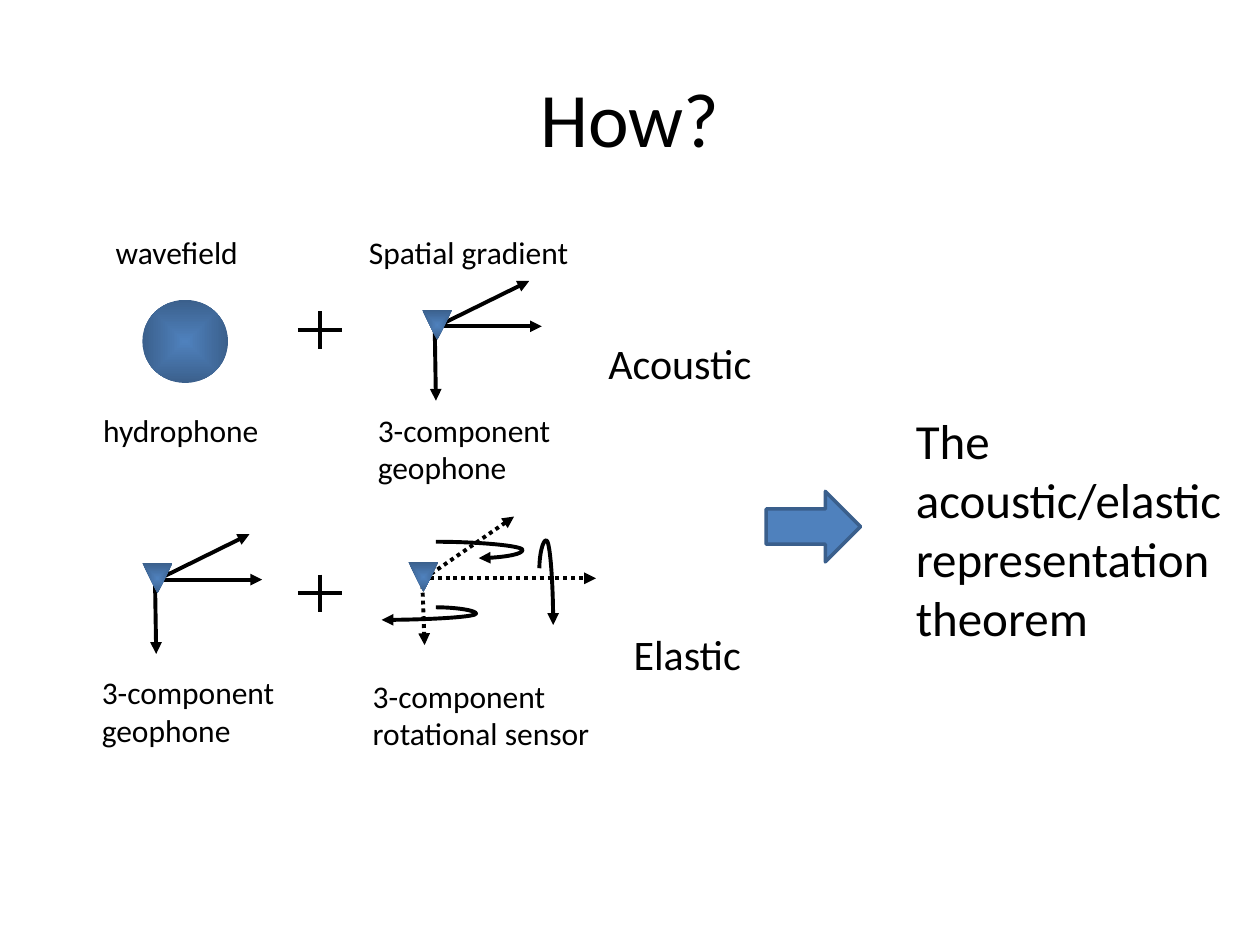
from lxml import etree
from pptx import Presentation
from pptx.dml.color import RGBColor
from pptx.enum.dml import MSO_LINE
from pptx.enum.shapes import MSO_CONNECTOR, MSO_SHAPE
from pptx.enum.text import MSO_ANCHOR, MSO_AUTO_SIZE, PP_ALIGN
from pptx.oxml import parse_xml
from pptx.oxml.ns import nsdecls, qn
from pptx.util import Inches, Pt

STRAIGHT, CURVE = MSO_CONNECTOR.STRAIGHT, MSO_CONNECTOR.CURVE
TRIANGLE, OVAL, ARROW = MSO_SHAPE.ISOSCELES_TRIANGLE, MSO_SHAPE.OVAL, MSO_SHAPE.RIGHT_ARROW
DOTTED = MSO_LINE.ROUND_DOT
CENTER, MIDDLE, FIT = PP_ALIGN.CENTER, MSO_ANCHOR.MIDDLE, MSO_AUTO_SIZE.SHAPE_TO_FIT_TEXT

THEME = {
    "font": "Calibri", "ink": "000000", "blue": "4F81BD", "dark": "3B608C", "border": "3A5F8C",
    "title": 44, "result": 28, "method": 24, "label": 18, "stroke": 2.25, "arrow_border": 2,
}

TITLE = ("How?", (0.5, 0.3, 9, 1.25))
# text, (left, top, width, height), size name, wraps
TEXTS = [
    ("wavefield", (0.82, 1.8, 1.3, 0.4), "label", True),
    ("Spatial gradient", (2.83, 1.8, 2.41, 0.4), "label", True),
    ("hydrophone", (0.72, 3.21, 1.87, 0.4), "label", True),
    ("3-component geophone", (2.9, 3.21, 1.87, 0.7), "label", True),
    ("3-component geophone", (0.71, 5.29, 1.87, 0.7), "label", True),
    ("3-component rotational sensor", (2.86, 5.32, 2.39, 0.71), "label", True),
    ("Acoustic", (4.73, 2.63, 1.54, 0.5), "method", False),
    ("Elastic", (4.93, 4.94, 1.15, 0.5), "method", False),
    ("The acoustic/elastic representation theorem", (7.17, 3.21, 2.75, 1.99), "result", True),
]
HYDROPHONE = (1.13, 2.38, 0.68, 0.66)
RESULT_ARROW = (6.08, 3.9, 0.75, 0.56)
PLUS_CENTERS = [(2.54, 2.62), (2.54, 4.71)]
PLUS_WIDTH, PLUS_HEIGHT = 0.35, 0.3

SENSOR_SIZE = 0.24
# axis start and end, measured from the sensor's top left corner
GEOPHONE_AXES = [((0.1, 0.12), (0.11, 0.72)), ((0.1, 0.13), (0.95, 0.13)),
                 ((0.12, 0.13), (0.85, -0.23))]
ROTATION_AXES = [((0.11, 0.12), (0.13, 0.66)), ((0.11, 0.13), (1.49, 0.13)),
                 ((0.13, 0.13), (0.84, -0.36))]
# corner, axes, dash
SENSORS = [
    ((3.35, 2.46), GEOPHONE_AXES, None),
    ((1.13, 4.47), GEOPHONE_AXES, None),
    ((3.24, 4.46), ROTATION_AXES, DOTTED),
]
# start, end, bulge in thousandths of a percent, clockwise degrees
ROTATIONS = [
    ((3.46, 4.3), (3.8, 4.43), 202100, 0),
    ((4.56, 4.68), (4.11, 4.79), -49500, 270),
    ((3.46, 4.82), (3.03, 4.92), -74300, 0),
]


def color(name):
    return RGBColor.from_string(THEME[name])


def inches(values):
    return [Inches(v) for v in values]


def style_text(tf, text, size, **formats):
    for name, value in formats.items():
        setattr(tf, name, value)
    p = tf.paragraphs[0]
    r = p.add_run()
    r.text = text
    r.font.name, r.font.size = THEME["font"], Pt(THEME[size])
    r.font.color.rgb = color("ink")
    return p


def add_line(shapes, start, end, kind=STRAIGHT, dash=None, head=True):
    line = shapes.add_connector(kind, *inches((*start, *end)))
    line.line.color.rgb = color("ink")
    line.line.width = Pt(THEME["stroke"])
    if dash:
        line.line.dash_style = dash
    if head:
        etree.SubElement(line.line._get_or_add_ln(), qn("a:tailEnd"), type="triangle")
    etree.SubElement(line._element.spPr, qn("a:effectLst"))
    return line


def add_rotation(shapes, start, end, bulge, degrees):
    sp_pr = add_line(shapes, start, end, CURVE)._element.spPr
    if degrees:
        sp_pr.find(qn("a:xfrm")).set("rot", str(degrees * 60000))
    guides = sp_pr.find(qn("a:prstGeom")).get_or_add_avLst()
    etree.SubElement(guides, qn("a:gd"), name="adj1", fmla=f"val {bulge}")


def add_shaded(shapes, kind, box):
    """Add a shape without outline, light in the middle and dark at the rim."""
    sp = shapes.add_shape(kind, *inches(box))
    sp.shadow.inherit = False
    sp.line.fill.background()
    stops = "".join(f'<a:gs pos="{pos}"><a:srgbClr val="{THEME[name]}"/></a:gs>'
                    for pos, name in ((0, "blue"), (100000, "dark")))
    sp._element.spPr.find(qn("a:prstGeom")).addnext(parse_xml(
        f'<a:gradFill {nsdecls("a")} rotWithShape="1"><a:gsLst>{stops}</a:gsLst>'
        '<a:path path="rect"><a:fillToRect l="50000" t="50000" r="50000" b="50000"/></a:path>'
        '</a:gradFill>'))
    return sp


def add_sensor(shapes, corner, axes, dash):
    x, y = corner
    for (x1, y1), (x2, y2) in axes:
        add_line(shapes, (x + x1, y + y1), (x + x2, y + y2), dash=dash)
    sp = add_shaded(shapes, TRIANGLE, (x, y, SENSOR_SIZE, SENSOR_SIZE))
    sp._element.spPr.find(qn("a:xfrm")).set("flipV", "1")


def add_plus(shapes, x, y):
    for dx, dy in ((PLUS_WIDTH / 2, 0), (0, PLUS_HEIGHT / 2)):
        add_line(shapes, (x - dx, y - dy), (x + dx, y + dy), head=False)


def main():
    prs = Presentation()
    prs.slide_width, prs.slide_height = Inches(10), Inches(7.5)
    slide = prs.slides.add_slide(prs.slide_layouts[5])
    shapes = slide.shapes

    text, box = TITLE
    title = shapes.title
    title.left, title.top, title.width, title.height = inches(box)
    style_text(title.text_frame, text, "title", vertical_anchor=MIDDLE).alignment = CENTER

    add_shaded(shapes, OVAL, HYDROPHONE)
    for sensor in SENSORS:
        add_sensor(shapes, *sensor)
    for rotation in ROTATIONS:
        add_rotation(shapes, *rotation)
    for center in PLUS_CENTERS:
        add_plus(shapes, *center)

    arrow = shapes.add_shape(ARROW, *inches(RESULT_ARROW))
    arrow.shadow.inherit = False
    arrow.fill.solid()
    arrow.fill.fore_color.rgb = color("blue")
    arrow.line.color.rgb = color("border")
    arrow.line.width = Pt(THEME["arrow_border"])

    for text, box, size, wraps in TEXTS:
        tf = shapes.add_textbox(*inches(box)).text_frame
        style_text(tf, text, size, word_wrap=wraps, auto_size=FIT)

    prs.save("out.pptx")


if __name__ == "__main__":
    main()
